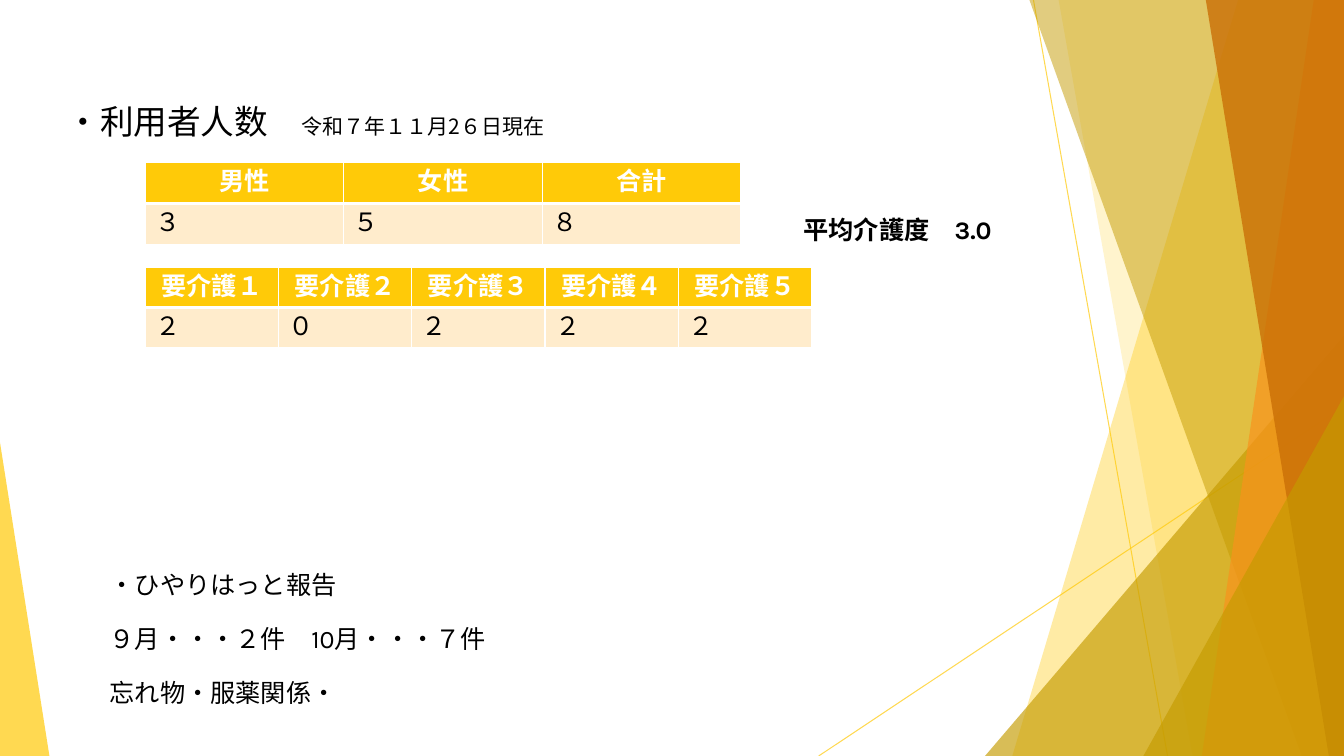
from lxml import etree
from pptx import Presentation
from pptx.dml.color import RGBColor
from pptx.enum.shapes import MSO_CONNECTOR, MSO_SHAPE
from pptx.enum.text import MSO_ANCHOR, PP_ALIGN
from pptx.oxml.ns import qn
from pptx.util import Pt

PX = 9144
WIDTH, HEIGHT = 1333, 750
TITLE_ONLY = 5
STRAIGHT = MSO_CONNECTOR.STRAIGHT
TRIANGLE = MSO_SHAPE.ISOSCELES_TRIANGLE
MIDDLE, TOP = MSO_ANCHOR.MIDDLE, MSO_ANCHOR.TOP
CENTER, LEFT = PP_ALIGN.CENTER, PP_ALIGN.LEFT
BODY_FONT, TITLE_FONT = "Karla", "Noto Sans CJK JP"
BLACK, WHITE = "000000", "FFFFFF"
YELLOW, OLIVE, ORANGE, BROWN, CREAM = "FFCA08", "C59B00", "F8931D", "CA6F06", "FFECCC"


def color(hex_code):
    return RGBColor.from_string(hex_code)


def scaled(box):
    return [length * PX for length in box]


def set_alpha(shape, percent):
    """Make every solid colour of the shape partly transparent."""
    for element in shape._element.spPr.iter(qn("a:srgbClr")):
        etree.SubElement(element, qn("a:alpha"), val=str(percent * 1000))


def add_run(paragraph, text, size, font_name=BODY_FONT, hex_code=BLACK, bold=False):
    run = paragraph.add_run()
    run.text = text
    run.font.size = Pt(size)
    run.font.name = font_name
    run.font.bold = bold
    run.font.color.rgb = color(hex_code)
    east_asian = etree.Element(qn("a:ea"), typeface=font_name)
    run.font._element.find(qn("a:latin")).addnext(east_asian)


def paint(shape, hex_code, opacity):
    shape.shadow.inherit = False
    shape.fill.solid()
    shape.fill.fore_color.rgb = color(hex_code)
    shape.line.fill.background()
    set_alpha(shape, opacity)


def add_ray(slide, start, end):
    ray = slide.shapes.add_connector(STRAIGHT, *scaled(start + end))
    ray.line.color.rgb = color(YELLOW)
    ray.line.width = Pt(0.75)
    set_alpha(ray, 70)
    etree.SubElement(ray._element.spPr, qn("a:effectLst"))


def add_facet(slide, top_left, bottom_left, hex_code, opacity):
    """Full-height panel running from a slanted left edge to the right edge."""
    builder = slide.shapes.build_freeform(top_left, 0, scale=PX)
    builder.add_line_segments([(WIDTH, 0), (WIDTH, HEIGHT), (bottom_left, HEIGHT)])
    paint(builder.convert_to_shape(), hex_code, opacity)


def add_corner(slide, left, top, width, apex, hex_code, opacity):
    """Triangle standing on the bottom edge of the slide."""
    corner = slide.shapes.add_shape(TRIANGLE, *scaled((left, top, width, HEIGHT - top)))
    corner.adjustments[0] = apex
    paint(corner, hex_code, opacity)


def add_decoration(slide):
    add_ray(slide, (1025, 0), (1158, HEIGHT))
    add_ray(slide, (WIDTH, 403), (812, HEIGHT))
    add_facet(slide, 1228, 1004, YELLOW, 36)
    add_facet(slide, 1050, 1183, YELLOW, 20)
    add_corner(slide, 977, 333, 356, 1, OLIVE, 66)
    add_facet(slide, 1021, 1291, OLIVE, 50)
    add_facet(slide, 1303, 1192, ORANGE, 70)
    add_facet(slide, 1196, 1318, BROWN, 80)
    add_corner(slide, 1134, 393, 199, 1, OLIVE, 66)
    add_corner(slide, 0, 439, 49, 0, YELLOW, 70)


def fill_title(slide, box):
    title = slide.shapes.title
    title.left, title.top, title.width, title.height = scaled(box)
    title.text_frame.vertical_anchor = MIDDLE
    paragraph = title.text_frame.paragraphs[0]
    paragraph.alignment = CENTER
    add_run(paragraph, "・利用者人数　", 24, TITLE_FONT)
    add_run(paragraph, "令和７年１１月2６日現在", 15, TITLE_FONT)


def set_borders(cell, widths):
    properties = cell._tc.get_or_add_tcPr()
    for position, (side, width) in enumerate(widths.items()):
        line = etree.Element(qn(f"a:ln{side}"), w=str(Pt(width)))
        fill = etree.SubElement(line, qn("a:solidFill"))
        etree.SubElement(fill, qn("a:srgbClr"), val=WHITE)
        properties.insert(position, line)


def add_count_table(slide, box, counts):
    """Two-row table with a category heading above each count."""
    frame = slide.shapes.add_table(2, len(counts), *scaled(box))
    for column, pair in enumerate(counts.items()):
        for row, text in enumerate(pair):
            header = row == 0
            cell = frame.table.cell(row, column)
            cell.fill.solid()
            cell.fill.fore_color.rgb = color(YELLOW if header else CREAM)
            set_borders(cell, {"L": 1, "R": 1, "T": 1 if header else 3,
                               "B": 3 if header else 1})
            paragraph = cell.text_frame.paragraphs[0]
            paragraph.alignment = CENTER if header else LEFT
            add_run(paragraph, text, 18, hex_code=WHITE if header else BLACK, bold=header)


def add_text(slide, box, lines, gap=0, bold=False):
    frame = slide.shapes.add_textbox(*scaled(box)).text_frame
    frame.word_wrap = True
    frame.vertical_anchor = TOP
    for index, line in enumerate(lines):
        paragraph = frame.paragraphs[0] if index == 0 else frame.add_paragraph()
        if index:
            paragraph.space_before = Pt(gap)
        add_run(paragraph, line, 18, bold=bold)


def build_user_report(presentation):
    slide = presentation.slides.add_slide(presentation.slide_layouts[TITLE_ONLY])
    add_decoration(slide)
    fill_title(slide, (48, 92, 510, 57))
    add_count_table(slide, (144, 161, 591, 82), {"男性": "３", "女性": "５", "合計": "８"})
    care_levels = {"要介護１": "２", "要介護２": "０", "要介護３": "２",
                   "要介護４": "２", "要介護５": "２"}
    add_count_table(slide, (144, 265, 661, 80), care_levels)
    add_text(slide, (787, 208, 275, 40), ["平均介護度　3.0"], bold=True)
    incidents = ["・ひやりはっと報告", "９月・・・２件　10月・・・７件", "忘れ物・服薬関係・"]
    add_text(slide, (99, 560, 408, 162), incidents, gap=17)


def main():
    presentation = Presentation()
    presentation.slide_width, presentation.slide_height = scaled((WIDTH, HEIGHT))
    build_user_report(presentation)
    presentation.save("out.pptx")


if __name__ == "__main__":
    main()
